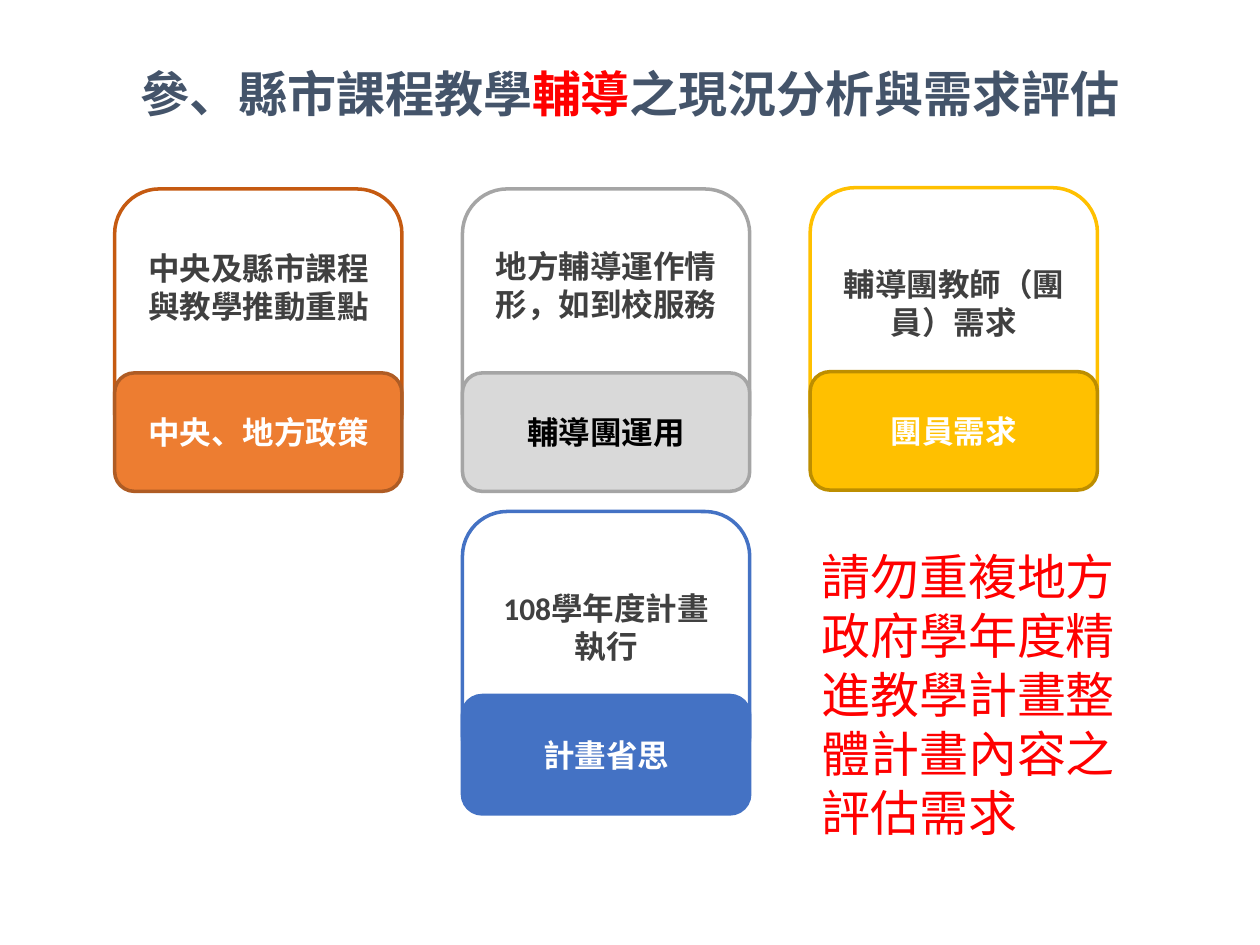
from pptx import Presentation
from pptx.dml.color import RGBColor
from pptx.enum.shapes import MSO_SHAPE as SHAPE
from pptx.enum.text import MSO_ANCHOR as ANCHOR, PP_ALIGN as ALIGN
from pptx.util import Inches, Pt

# Content
RED, NAVY, GREY, WHITE = "FF0000", "44546A", "404040", "FFFFFF"
HEAD_FONT, CARD_FONT = "Noto Sans CJK SC", "Calibri"
TITLE = [("參、縣市課程教學", NAVY), ("輔導", RED), ("之現況分析與需求評估", NAVY)]
NOTE = [("請勿重複地方政府學年度精進教學計畫整體計畫內容之評估需求", RED)]
# column, top, body text, space kept below it, label, label colour,
# body outline, label fill, label outline
CARDS = [
    (0, 1.5, "中央及縣市課程與教學推動重點", 0.57, "中央、地方政策", WHITE,
     "C55A11", "ED7D31", "AF5C24"),
    (1, 1.5, "地方輔導運作情形，如到校服務", 0.6, "輔導團運用", "000000",
     "A5A5A5", "D9D9D9", "A5A5A5"),
    (2, 1.49, "輔導團教師（團員）需求", 0.3, "團員需求", WHITE,
     "FFC000", "FFC000", "BD8E00"),
    (1, 4.06, "108學年度計畫執行", 0.3, "計畫省思", WHITE,
     "4472C4", "4472C4", "4472C4"),
]
LEFT, PITCH, CARD_W = 0.91, 2.76, 2.28
BODY_H, LABEL_H, LABEL_DROP = 2.13, 0.94, 1.46


def rgb(value):
    return RGBColor.from_string(value)


def write(sp, runs, size, font, bold, align, anchor):
    tf = sp.text_frame
    tf.word_wrap = True
    tf.vertical_anchor = anchor
    p = tf.paragraphs[0]
    p.alignment = align
    p.font.size, p.font.name, p.font.bold = Pt(size), font, bold
    for text, color in runs:
        r = p.add_run()
        r.text = text
        r.font.color.rgb = rgb(color)


def add_text(box, runs, bold, align, anchor):
    sp = s.shapes.add_textbox(*map(Inches, box))
    write(sp, runs, 28, HEAD_FONT, bold, align, anchor)


def add_panel(x, y, h, fill, line, text, color, space_below=0):
    sp = s.shapes.add_shape(SHAPE.ROUNDED_RECTANGLE, *map(Inches, (x, y, CARD_W, h)))
    sp.shadow.inherit = False
    sp.fill.solid()
    sp.fill.fore_color.rgb = rgb(fill)
    sp.line.color.rgb = rgb(line)
    sp.line.width = Pt(2)
    write(sp, [(text, color)], 18, CARD_FONT, True, ALIGN.CENTER, ANCHOR.MIDDLE)
    sp.text_frame.margin_bottom = Inches(0.05 + space_below)


prs = Presentation()
prs.slide_width, prs.slide_height = Inches(10), Inches(7.5)
s = prs.slides.add_slide(prs.slide_layouts[6])

# Title and note
add_text((0.5, 0.15, 9, 1.17), TITLE, True, ALIGN.CENTER, ANCHOR.MIDDLE)
add_text((6.42, 4.29, 2.91, 2.46), NOTE, False, ALIGN.LEFT, ANCHOR.TOP)

# Cards: a body with a label over its lower edge
for col, top, body, space, label, label_color, outline, fill, edge in CARDS:
    x = LEFT + col * PITCH
    add_panel(x, top, BODY_H, WHITE, outline, body, GREY, space)
    add_panel(x, top + LABEL_DROP, LABEL_H, fill, edge, label, label_color)

prs.save("out.pptx")
